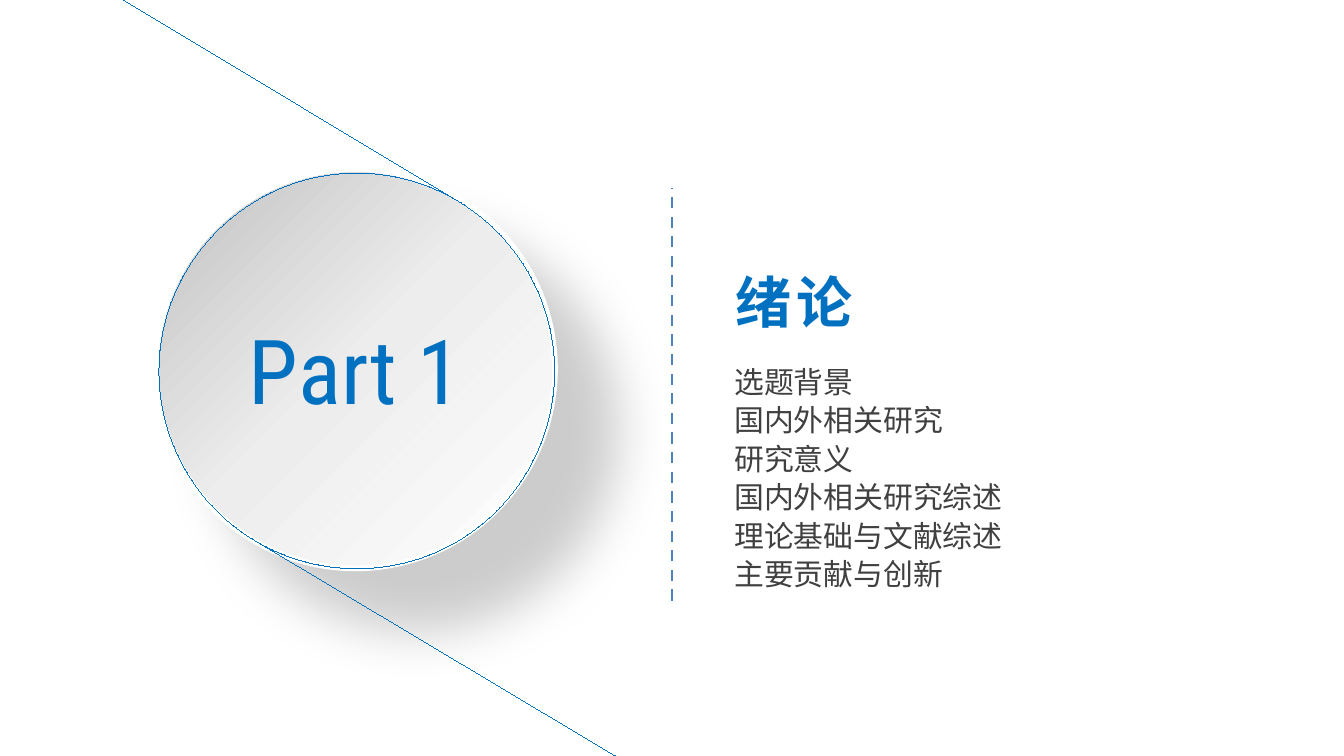
import copy
import math

import pptx
import pptx.dml.color
import pptx.enum.dml
import pptx.enum.shapes
import pptx.enum.text
import pptx.oxml
import pptx.oxml.ns
import pptx.util

BLUE = pptx.dml.color.RGBColor(0x00, 0x70, 0xC0)
DASH_BLUE = pptx.dml.color.RGBColor(0x4F, 0x81, 0xBD)
DARK = pptx.dml.color.RGBColor(0x40, 0x40, 0x40)
WHITE = pptx.dml.color.RGBColor(0xFF, 0xFF, 0xFF)
SHADES = [
    (0, pptx.dml.color.RGBColor(0xC0, 0xC0, 0xC0)),
    (0.49, pptx.dml.color.RGBColor(0xED, 0xED, 0xED)),
    (1, WHITE),
]
CJK = "Noto Sans CJK SC"
LATIN = "Roboto Condensed"
COLS, ROWS = 100, 56.25
CENTER = (26.55, 27.6)
RADIUS = 14.72
HAIRLINE = 0.01
TOPICS = [
    "选题背景",
    "国内外相关研究",
    "研究意义",
    "国内外相关研究综述",
    "理论基础与文献综述",
    "主要贡献与创新",
]


def grid(*cells):
    """Turn counts of tenth-inch grid cells into lengths."""
    return [pptx.util.Inches(cell / 10) for cell in cells]


def rim_point(degrees, handle=0):
    """Return a rim point at a clockwise angle, shifted along its tangent."""
    a = math.radians(degrees)
    return (CENTER[0] + RADIUS * (math.cos(a) - handle * math.sin(a)),
            CENTER[1] + RADIUS * (math.sin(a) + handle * math.cos(a)))


def add_run(p, text, font, size, color, bold=False):
    """Add a run with its Latin and East Asian font."""
    r = p.add_run()
    r.text = text
    r.font.size = pptx.util.Pt(size)
    r.font.bold = bold
    r.font.color.rgb = color
    r.font.name = font
    ea = pptx.oxml.parse_xml(f'<a:ea {pptx.oxml.ns.nsdecls("a")} typeface="{font}"/>')
    r.font._element.find(pptx.oxml.ns.qn("a:latin")).addnext(ea)
    return r


def add_disc(s, text):
    """Add the shaded disc with its label and soft shadow."""
    sp = s.shapes.add_shape(
        pptx.enum.shapes.MSO_SHAPE.OVAL, *grid(11.6, 12.6, 29.7, 29.7))
    sp.fill.gradient()
    sp.fill.gradient_angle = 315
    stops = sp._element.spPr.find(".//" + pptx.oxml.ns.qn("a:gsLst"))
    stops.append(copy.deepcopy(stops[0]))
    for stop, (position, color) in zip(sp.fill.gradient_stops, SHADES):
        stop.position = position
        stop.color.rgb = color
    sp.line.color.rgb = WHITE
    sp.line.width = pptx.util.Pt(3)
    sp.shadow.inherit = False
    sp._element.spPr.find(pptx.oxml.ns.qn("a:effectLst")).append(pptx.oxml.parse_xml(
        f'<a:outerShdw {pptx.oxml.ns.nsdecls("a")} blurRad="{pptx.util.Pt(29)}" '
        f'dist="{pptx.util.Pt(46)}" dir="2700000" algn="tl" rotWithShape="0">'
        '<a:srgbClr val="000000"><a:alpha val="20000"/></a:srgbClr></a:outerShdw>'))
    tf = sp.text_frame
    tf.margin_left = tf.margin_right = 0
    tf.margin_top = tf.margin_bottom = pptx.util.Inches(0.04)
    tf.vertical_anchor = pptx.enum.text.MSO_ANCHOR.MIDDLE
    p = tf.paragraphs[0]
    p.alignment = pptx.enum.text.PP_ALIGN.CENTER
    add_run(p, text, LATIN, 48, BLUE)


def curve_segments(sp):
    """Turn each three line segments of an outline into one curve."""
    qn = pptx.oxml.ns.qn
    segments = list(sp._element.iter(qn("a:lnTo")))
    for i in range(0, len(segments), 3):
        curve = pptx.oxml.parse_xml(f'<a:cubicBezTo {pptx.oxml.ns.nsdecls("a")}/>')
        segments[i].addprevious(curve)
        for segment in segments[i:i + 3]:
            curve.append(segment[0])
            segment.getparent().remove(segment)


def add_half_rim(s, angles):
    """Outline half of the disc with one curve between each two angles."""
    points = [rim_point(angles[0])]
    for a, b in zip(angles, angles[1:]):
        handle = 4 / 3 * math.tan(math.radians(b - a) / 4)
        points += [rim_point(a, handle), rim_point(b, -handle), rim_point(b)]
    points = [grid(*point) for point in points]
    fb = s.shapes.build_freeform(*points[0])
    fb.add_line_segments(points[1:], close=False)
    sp = fb.convert_to_shape()
    curve_segments(sp)
    sp.fill.background()
    sp.line.color.rgb = BLUE
    sp.line.width = pptx.util.Pt(HAIRLINE)
    sp.shadow.inherit = False


def add_line(s, start, end, color, width=HAIRLINE, dash=None):
    """Add a straight line between two grid points."""
    cx = s.shapes.add_connector(
        pptx.enum.shapes.MSO_CONNECTOR.STRAIGHT, *grid(*start, *end))
    cx.line.color.rgb = color
    cx.line.width = pptx.util.Pt(width)
    if dash:
        cx.line.dash_style = dash
    cx._element.spPr.append(
        pptx.oxml.parse_xml(f'<a:effectLst {pptx.oxml.ns.nsdecls("a")}/>'))


def place(sp, *cells):
    """Move a placeholder on the grid and return its text frame."""
    sp.left, sp.top, sp.width, sp.height = grid(*cells)
    tf = sp.text_frame
    tf.auto_size = pptx.enum.text.MSO_AUTO_SIZE.NONE
    tf.vertical_anchor = pptx.enum.text.MSO_ANCHOR.TOP
    return tf


def fill_title(s, text):
    """Write the spaced section title."""
    tf = place(s.shapes.title, 53.7, 19.4, 11.3, 6.1)
    tf.word_wrap = False
    p = tf.paragraphs[0]
    p.alignment = pptx.enum.text.PP_ALIGN.LEFT
    r = add_run(p, text, CJK, 30, BLUE, bold=True)
    r.font._element.set("spc", "300")


def fill_topics(s, topics):
    """Write the plain list of topics."""
    tf = place(s.placeholders[1], 54.65, 26.85, 20.5, 17.2)
    tf.margin_left = tf.margin_right = tf.margin_top = tf.margin_bottom = 0
    tf.word_wrap = True
    for i, topic in enumerate(topics):
        p = tf.add_paragraph() if i else tf.paragraphs[0]
        pPr = p._p.get_or_add_pPr()
        pPr.set("marL", "0")
        pPr.set("indent", "0")
        pPr.append(pptx.oxml.parse_xml(f'<a:buNone {pptx.oxml.ns.nsdecls("a")}/>'))
        p.space_before = 0
        p.line_spacing = pptx.util.Pt(20.6)
        add_run(p, topic, CJK, 16, DARK)


def main():
    """Build the section slide and save it."""
    prs = pptx.Presentation()
    prs.slide_width, prs.slide_height = grid(COLS, ROWS)
    s = prs.slides.add_slide(prs.slide_layouts[1])
    add_disc(s, "Part 1")
    for start, outer in ((-60, (9.2, 0)), (120, (45.8, ROWS))):
        add_half_rim(s, [start, start + 60, start + 150, start + 180])
        add_line(s, rim_point(start), outer, BLUE)
    add_line(s, (COLS / 2, 44.7), (COLS / 2, 14), DASH_BLUE, 1.5,
             pptx.enum.dml.MSO_LINE.DASH)
    fill_title(s, "绪论")
    fill_topics(s, TOPICS)
    prs.save("out.pptx")


if __name__ == "__main__":
    main()
